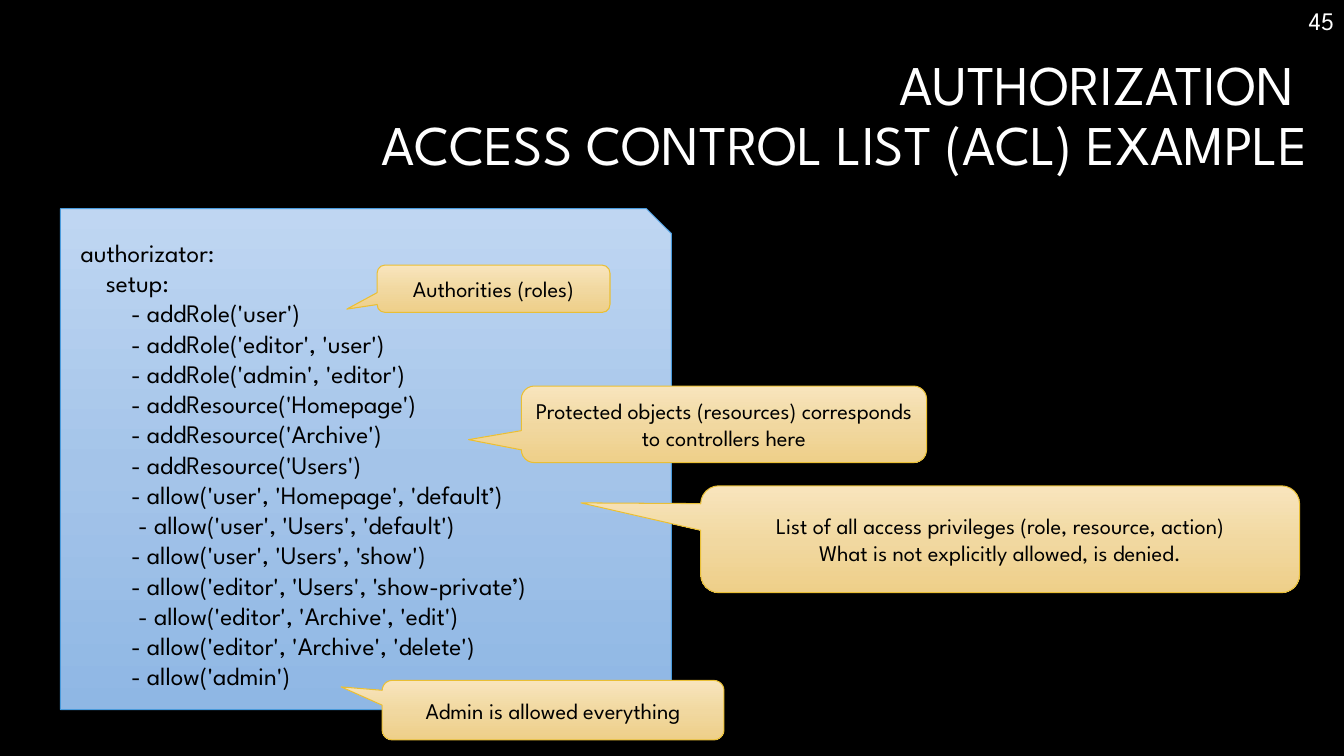
import copy
from dataclasses import dataclass

import pptx
import pptx.dml.color
import pptx.enum.shapes
import pptx.enum.text
import pptx.oxml.ns
import pptx.util

Inches = pptx.util.Inches
MSO_SHAPE = pptx.enum.shapes.MSO_SHAPE
ALIGN = pptx.enum.text.PP_ALIGN
ANCHOR = pptx.enum.text.MSO_ANCHOR


@dataclass(frozen=True)
class Theme:
    font: str = "League Spartan"
    background: str = "000000"
    light: str = "FFFFFF"
    dark: str = "000000"
    code_fill: tuple[str, ...] = ("BFD6F2", "A4C4E9", "8FB7E4")
    code_line: str = "4A9BDC"
    note_fill: tuple[str, ...] = ("F8E5BD", "F1D8A0", "EECF89")
    note_line: str = "E9BF35"
    title_size: int = 40
    body_size: int = 18
    note_size: int = 16
    line_width: float = 0.75


@dataclass(frozen=True)
class CodeLine:
    text: str
    indent: float = 0.5


@dataclass(frozen=True)
class Callout:
    text: str
    box: tuple[float, float, float, float]
    tip: tuple[float, float]


THEME = Theme()
TAB_INDENT = 0.57  # the two lines set slightly further in

CODE = [
    CodeLine("authorizator:", 0),
    CodeLine("setup:", 0.25),
    CodeLine("- addRole('user')"),
    CodeLine("- addRole('editor', 'user')"),
    CodeLine("- addRole('admin', 'editor')"),
    CodeLine("- addResource('Homepage')"),
    CodeLine("- addResource('Archive')"),
    CodeLine("- addResource('Users')"),
    CodeLine("- allow('user', 'Homepage', 'default’)"),
    CodeLine("- allow('user', 'Users', 'default')", TAB_INDENT),
    CodeLine("- allow('user', 'Users', 'show')"),
    CodeLine("- allow('editor', 'Users', 'show-private’)"),
    CodeLine("- allow('editor', 'Archive', 'edit')", TAB_INDENT),
    CodeLine("- allow('editor', 'Archive', 'delete')"),
    CodeLine("- allow('admin')"),
]

CALLOUTS = [
    Callout("Authorities (roles)", (3.74, 2.63, 2.31, 0.47), (-0.63, 0.43)),
    Callout("Protected objects (resources) corresponds to controllers here",
            (5.17, 3.83, 4.02, 0.76), (-0.63, 0.2)),
    Callout("List of all access privileges (role, resource, action)\v"
            "What is not explicitly allowed, is denied.",
            (6.95, 4.82, 5.94, 1.06), (-0.7, -0.34)),
    Callout("Admin is allowed everything", (3.79, 6.75, 3.39, 0.59), (-0.62, -0.39)),
]


def rgb(value: str) -> pptx.dml.color.RGBColor:
    return pptx.dml.color.RGBColor.from_string(value)


def write(p, text: str, *, size: int, color: str, align=ALIGN.LEFT,
          spacing: float = 1.0, indent: float = 0) -> None:
    """Fill one paragraph; a vertical tab in the text is a line break."""
    p.text = text
    p.alignment = align
    p.line_spacing = spacing
    if indent:
        p._p.get_or_add_pPr().set("marL", str(Inches(indent)))
    for r in p.runs:
        r.font.name = THEME.font
        r.font.size = pptx.util.Pt(size)
        r.font.color.rgb = rgb(color)


def add_text(s, box: tuple[float, ...], text: str, **fmt) -> None:
    tf = s.shapes.add_textbox(*map(Inches, box)).text_frame
    tf.word_wrap = True
    tf.vertical_anchor = ANCHOR.MIDDLE
    write(tf.paragraphs[0], text, **fmt)


def add_panel(s, kind, box: tuple[float, ...], adjustments: tuple[float, ...],
              fill: tuple[str, ...], line: str):
    """Add a shape with a three-stop gradient running downwards."""
    sp = s.shapes.add_shape(kind, *map(Inches, box))
    sp.shadow.inherit = False
    for i, value in enumerate(adjustments):
        sp.adjustments[i] = value
    sp.fill.gradient()
    sp.fill.gradient_angle = 270
    first = next(sp._element.spPr.iter(pptx.oxml.ns.qn("a:gs")))
    first.addnext(copy.deepcopy(first))
    for stop, position, color in zip(sp.fill.gradient_stops, (0, 0.52, 1), fill):
        stop.position = position
        stop.color.rgb = rgb(color)
    sp.line.color.rgb = rgb(line)
    sp.line.width = pptx.util.Pt(THEME.line_width)
    sp.text_frame.word_wrap = True
    return sp


def add_code(s) -> None:
    sp = add_panel(s, MSO_SHAPE.SNIP_1_RECTANGLE, (0.6, 2.07, 6.06, 4.97), (0.05,),
                   THEME.code_fill, THEME.code_line)
    tf = sp.text_frame
    tf.vertical_anchor = ANCHOR.TOP
    tf.margin_left = tf.margin_right = tf.margin_bottom = Inches(0.2)
    tf.margin_top = Inches(0.16)
    for i, line in enumerate(CODE):
        p = tf.add_paragraph() if i else tf.paragraphs[0]
        write(p, line.text, size=THEME.body_size, color=THEME.dark, indent=line.indent)


def add_callout(s, note: Callout) -> None:
    sp = add_panel(s, MSO_SHAPE.ROUNDED_RECTANGULAR_CALLOUT, note.box,
                   (*note.tip, 0.17), THEME.note_fill, THEME.note_line)
    sp.text_frame.vertical_anchor = ANCHOR.MIDDLE
    write(sp.text_frame.paragraphs[0], note.text, size=THEME.note_size,
          color=THEME.dark, align=ALIGN.CENTER)


def main() -> None:
    prs = pptx.Presentation()
    prs.slide_width, prs.slide_height = Inches(13.33), Inches(7.5)
    s = prs.slides.add_slide(prs.slide_layouts[6])
    s.background.fill.solid()
    s.background.fill.fore_color.rgb = rgb(THEME.background)

    # Title and page number
    add_text(s, (0.26, 0.46, 12.81, 1.41),
             "AUTHORIZATION \vACCESS CONTROL LIST (ACL) EXAMPLE",
             size=THEME.title_size, color=THEME.light, align=ALIGN.RIGHT, spacing=0.9)
    add_text(s, (10.45, 0, 2.88, 0.4), "45",
             size=THEME.body_size, color=THEME.light, align=ALIGN.RIGHT)

    # Configuration listing with its explanations
    add_code(s)
    for note in CALLOUTS:
        add_callout(s, note)

    prs.save("out.pptx")


if __name__ == "__main__":
    main()
